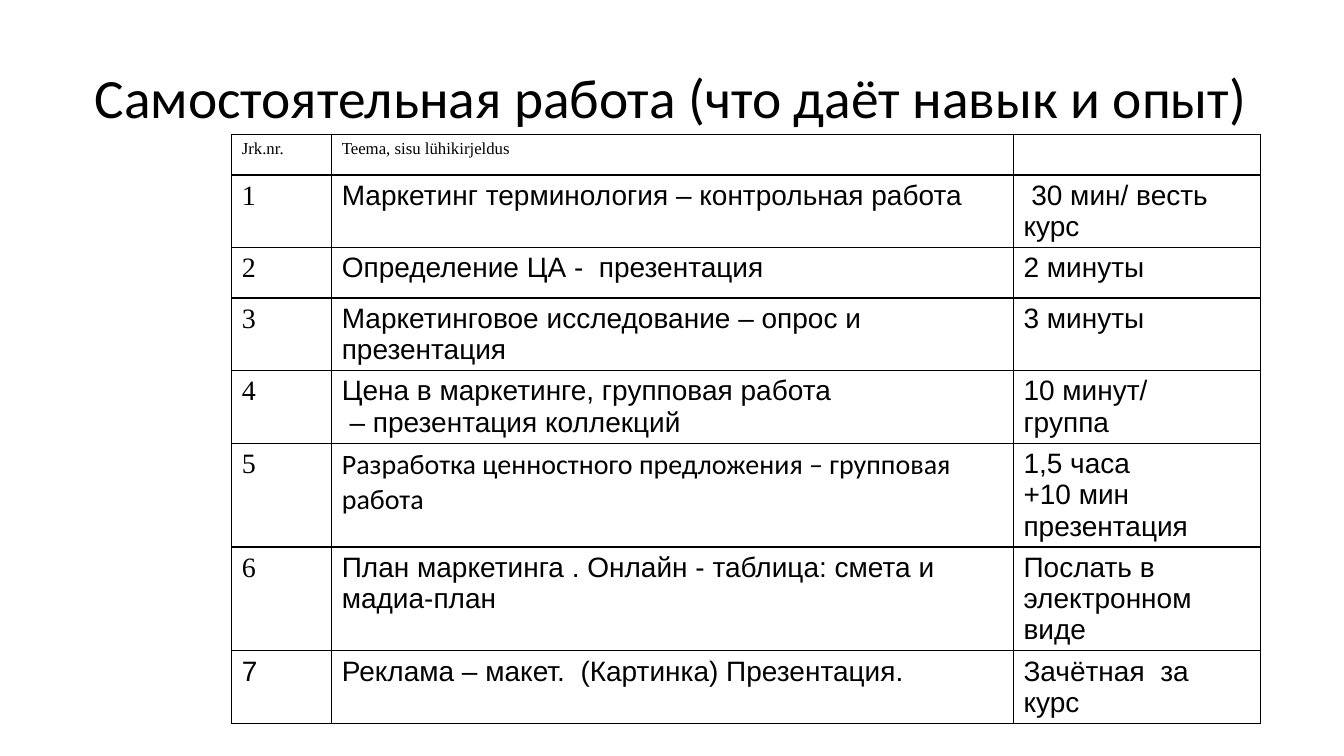
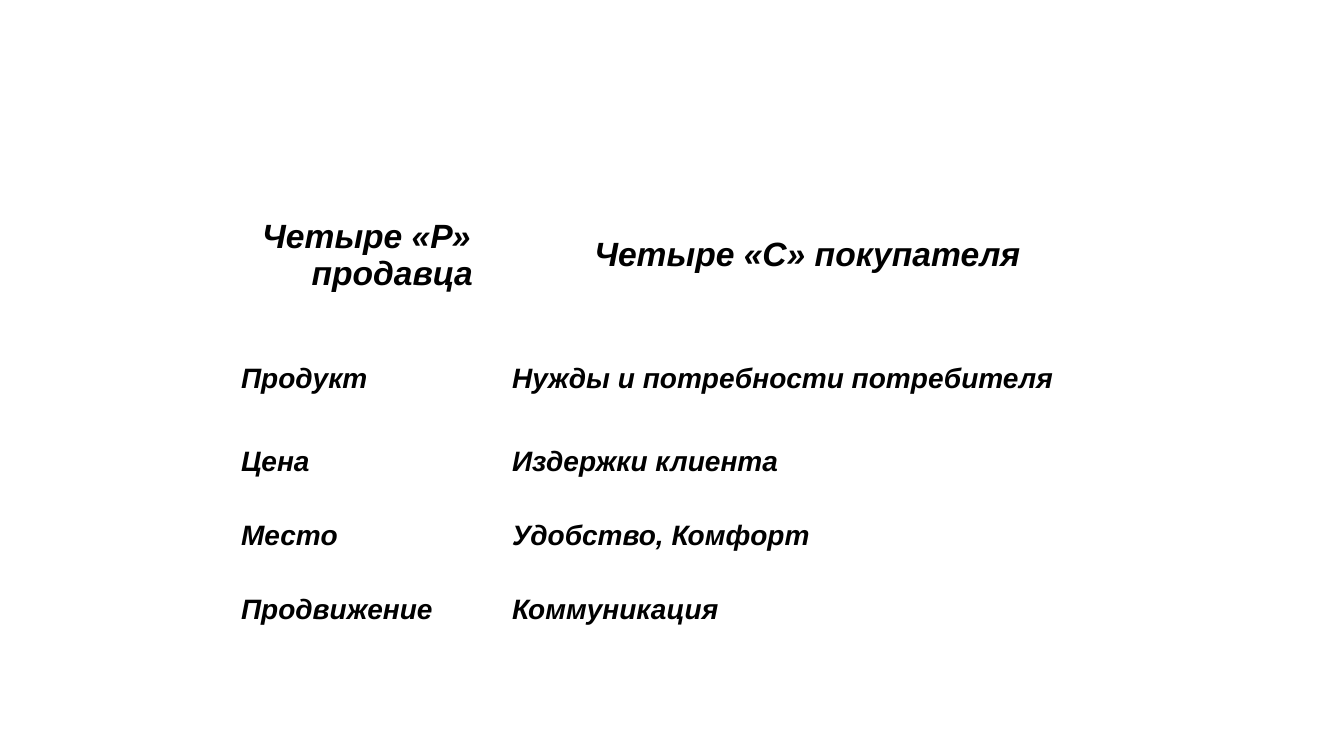
from lxml import etree
from pptx import Presentation
from pptx.dml.color import RGBColor
from pptx.enum.text import MSO_ANCHOR, MSO_AUTO_SIZE, PP_ALIGN
from pptx.oxml.ns import qn
from pptx.util import Cm, Pt

BLACK = RGBColor(0x00, 0x00, 0x00)
TOP, MIDDLE = MSO_ANCHOR.TOP, MSO_ANCHOR.MIDDLE
LEFT, CENTER = PP_ALIGN.LEFT, PP_ALIGN.CENTER
NO_FIT = MSO_AUTO_SIZE.NONE
TITLE_ONLY, BLANK = 5, 6

SANS, SERIF, BODY = "Arial", "Times New Roman", "Calibri"
HEAD = {"name": SERIF, "size": Pt(12)}
TEXT = {"name": SANS, "size": Pt(20)}
COUNT = {**TEXT, "name": SERIF}
LIGHT = {**TEXT, "name": BODY}
STRONG = {**TEXT, "bold": True, "italic": True}
LARGE = {**STRONG, "size": Pt(24)}
TITLE = {"name": BODY, "size": Pt(39.6)}

TASKS = [
    ("Jrk.nr.", "Teema, sisu lühikirjeldus", ""),
    ("1", "Маркетинг терминология – контрольная работа",
     " 30 мин/ весть курс"),
    ("2", "Определение ЦА -  презентация", "2 минуты"),
    ("3", "Маркетинговое исследование – опрос и презентация", "3 минуты"),
    ("4", "Цена в маркетинге, групповая работа\n – презентация коллекций",
     "10 минут/\nгруппа"),
    ("5", "Разработка ценностного предложения – групповая работа",
     "1,5 часа\n+10 мин презентация"),
    ("6", "План маркетинга . Онлайн - таблица: смета и мадиа-план",
     "Послать в электронном виде"),
    ("7", "Реклама – макет.  (Картинка) Презентация.", "Зачётная  за курс"),
]
PAIRS = [
    ("Четыре «Р» продавца", "Четыре «С» покупателя"),
    ("Продукт", "Нужды и потребности потребителя"),
    ("Цена", "Издержки клиента"),
    ("Место", "Удобство, Комфорт"),
    ("Продвижение", "Коммуникация"),
]


def style(para, form, align=LEFT):
    para.alignment = align
    for key, value in form.items():
        setattr(para.font, key, value)
    para.font.color.rgb = BLACK


def frame(cell):
    """Draw a thin black line on all four sides of a cell."""
    props = cell._tc.get_or_add_tcPr()
    for side in ("lnL", "lnR", "lnT", "lnB"):
        line = etree.SubElement(props, qn(f"a:{side}"), w=str(Pt(1)))
        fill = etree.SubElement(line, qn("a:solidFill"))
        etree.SubElement(fill, qn("a:srgbClr"), val=str(BLACK))


def hang(para, width):
    props = para._p.get_or_add_pPr()
    props.set("marL", str(width))
    props.set("indent", str(-width))


def add_grid(slide, left, top, widths, heights, rows):
    """Add a plain table and return its cells, row by row."""
    shape = slide.shapes.add_table(len(rows), len(widths), left, top,
                                   sum(widths), sum(heights))
    table = shape.table
    table.first_row = table.horz_banding = False
    for col, width in zip(table.columns, widths):
        col.width = width
    for row, height, texts in zip(table.rows, heights, rows):
        row.height = height
        for cell, text in zip(row.cells, texts):
            cell.text = text
    return [list(row.cells) for row in table.rows]


def add_title(slide, text, left, top, width, height):
    title = slide.shapes.title
    title.left, title.top, title.width, title.height = left, top, width, height
    body = title.text_frame
    body.text = text
    body.auto_size = NO_FIT
    body.vertical_anchor = MIDDLE
    para = body.paragraphs[0]
    para.line_spacing = 0.9
    style(para, TITLE)


def task_form(row, col):
    if row == 0:
        return HEAD
    if col == 0 and row < len(TASKS) - 1:
        return COUNT
    return LIGHT if (row, col) == (5, 1) else TEXT


def task_slide(deck):
    slide = deck.slides.add_slide(deck.slide_layouts[TITLE_ONLY])
    add_title(slide, "Самостоятельная работа (что даёт навык и опыт)",
              Cm(2.13), Cm(0.84), Cm(29.64), Cm(3.38))
    widths = [Cm(w) for w in (2.52, 17.18, 6.23)]
    heights = [Cm(h) for h in (1.03, 1.82, 1.27, 1.82, 1.82, 2.6, 2.6, 1.82)]
    grid = add_grid(slide, Cm(5.84), Cm(3.38), widths, heights, TASKS)
    for r, cells in enumerate(grid):
        for c, cell in enumerate(cells):
            frame(cell)
            cell.fill.background()
            for para in cell.text_frame.paragraphs:
                style(para, task_form(r, c))


def pair_slide(deck):
    slide = deck.slides.add_slide(deck.slide_layouts[BLANK])
    widths = [Cm(6.83), Cm(15.39)]
    heights = [Cm(3.12)] * 2 + [Cm(1.87)] * 3
    grid = add_grid(slide, Cm(5.82), Cm(4.87), widths, heights, PAIRS)
    for r, cells in enumerate(grid):
        for cell in cells:
            cell.fill.background()
            cell.vertical_anchor = MIDDLE if r < 2 else TOP
            para = cell.text_frame.paragraphs[0]
            hang(para, Cm(1.3))
            if r == 0:
                style(para, LARGE, CENTER)
            else:
                style(para, STRONG)


def main():
    deck = Presentation()
    deck.slide_width, deck.slide_height = Cm(33.87), Cm(19.05)
    task_slide(deck)
    pair_slide(deck)
    deck.save("out.pptx")


if __name__ == "__main__":
    main()
